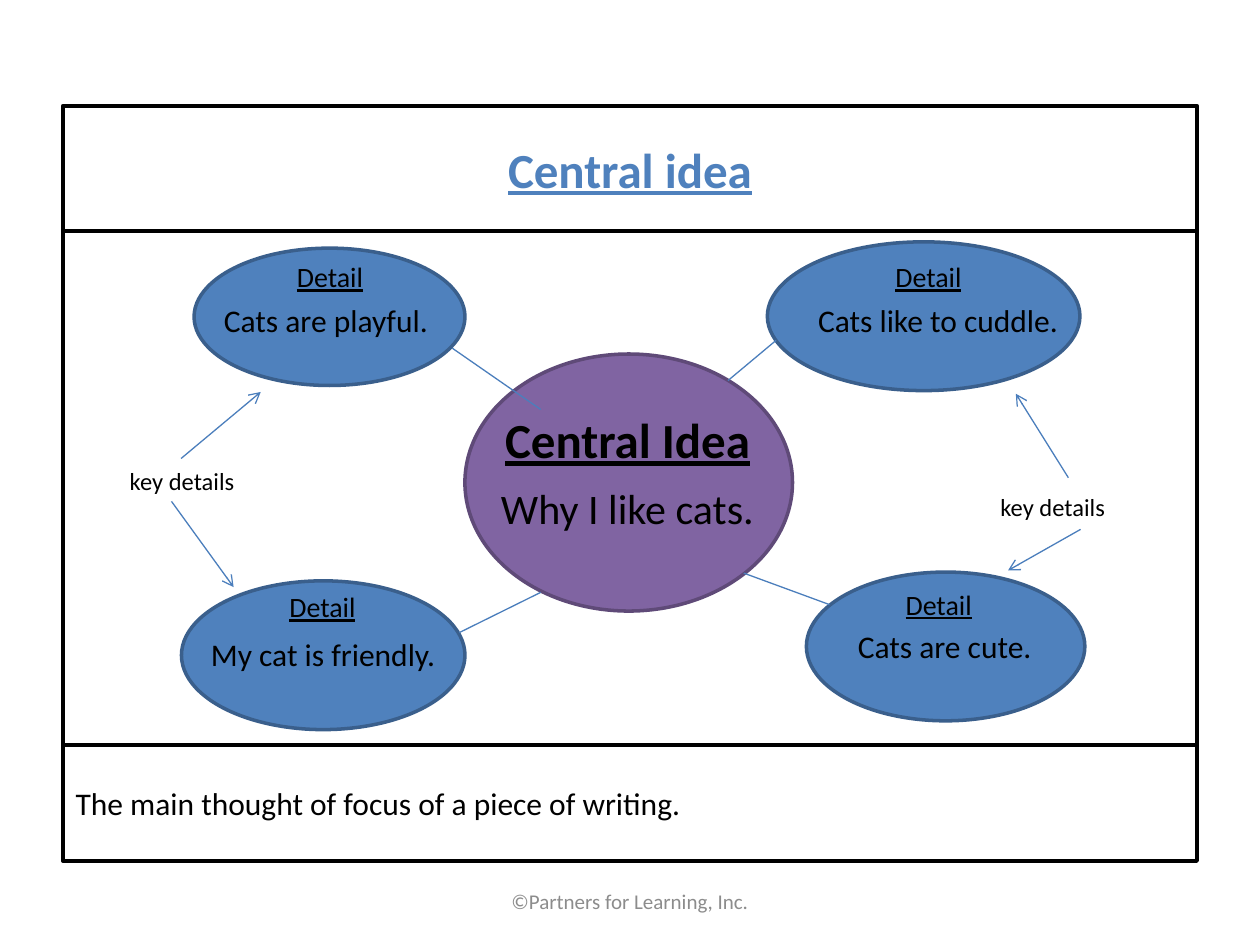
from pptx import Presentation
from pptx.dml.color import RGBColor
from pptx.enum.shapes import MSO_CONNECTOR as Link, MSO_SHAPE as Form
from pptx.enum.text import MSO_ANCHOR as Anchor, PP_ALIGN as Align
from pptx.oxml.ns import qn
from pptx.util import Pt
from lxml.etree import SubElement as Sub


def paint(color, tone):
    color.rgb = RGBColor.from_string(tone)


def write(shape, words, size, tone="000000", align=Align.CENTER,
          anchor=Anchor.TOP, bold=False, under=False):
    frame = shape.text_frame
    frame.text = words
    frame.word_wrap = True
    frame.vertical_anchor = anchor
    para = frame.paragraphs[0]
    para.alignment = align
    font = para.runs[0].font
    font.name, font.size = "Calibri", Pt(size)
    font.bold, font.underline = bold, under
    paint(font.color, tone)


deck = Presentation()
deck.slide_width, deck.slide_height = Pt(720), Pt(540)
slide = deck.slides.add_slide(deck.slide_layouts[1])
shapes = slide.shapes
title, body = slide.placeholders[0], slide.placeholders[1]

# Three stacked frames
left, width = 36, 648
rows = [(60.5, 71.5), (132, 294), (426, 66)]
for top, height in rows:
    frame = shapes.add_shape(Form.RECTANGLE, Pt(left), Pt(top), Pt(width), Pt(height))
    frame.shadow.inherit = False
    frame.fill.background()
    paint(frame.line.color, "000000")
    frame.line.width = Pt(2.25)

# Title and definition, in the first and last frames
for holder, (top, height) in ((title, rows[0]), (body, rows[2])):
    holder.left, holder.top = Pt(left), Pt(top)
    holder.width, holder.height = Pt(width), Pt(height)
write(title, "Central idea", 28, "4F81BD", anchor=Anchor.MIDDLE, bold=True, under=True)
write(body, "The main thought of focus of a piece of writing.", 18,
      align=Align.LEFT, anchor=Anchor.MIDDLE)
props = body.text_frame.paragraphs[0]._p.get_or_add_pPr()
props.set("marL", "0")
props.set("indent", "0")
Sub(props, qn("a:buNone"))

# Ellipses: four details around the central idea
blue, purple = ("4F81BD", "3A5F8C"), ("8064A2", "5F4A78")
ovals = [
    (460.8, 326.9, 159.1, 85, blue),
    (438.5, 138.2, 178.6, 85, blue),
    (103.7, 331.9, 162, 85, blue),
    (110.9, 141.8, 154.8, 78.5, blue),
    (265.7, 202.3, 187.2, 146.9, purple),
]
for x, y, w, h, (fill, edge) in ovals:
    oval = shapes.add_shape(Form.OVAL, Pt(x), Pt(y), Pt(w), Pt(h))
    oval.shadow.inherit = False
    oval.fill.solid()
    paint(oval.fill.fore_color, fill)
    paint(oval.line.color, edge)
    oval.line.width = Pt(2)

# Spokes from the centre, then arrows from the key details labels
lines = [
    (309, 234, 258.5, 199, False),
    (416, 217.5, 443.5, 194.5, False),
    (425, 327.5, 474, 345.5, False),
    (309, 338.5, 262.5, 361.5, False),
    (103.5, 262, 149, 224, True),
    (98, 286.5, 133.5, 335.5, True),
    (610.5, 273, 580.5, 225, True),
    (617.5, 302.5, 576, 326, True),
]
for x1, y1, x2, y2, arrow in lines:
    line = shapes.add_connector(Link.STRAIGHT, Pt(x1), Pt(y1), Pt(x2), Pt(y2))
    paint(line.line.color, "4B7EBC")
    line.line.width = Pt(0.75)
    if arrow:
        Sub(line.line._get_or_add_ln(), qn("a:tailEnd"), type="arrow")
    Sub(line._element.spPr, qn("a:effectLst"))

# Labels
head = dict(size=16, under=True)
fact = dict(size=18)
key = dict(size=14)
labels = [
    ("Central Idea", 272.9, 230.4, 171.4, 41.8, dict(size=28, bold=True, under=True)),
    ("Why I like cats.", 274.3, 272.2, 168.5, 36, dict(size=24)),
    ("Detail", 486.7, 144.7, 87.8, 27.4, head),
    ("Detail", 144.7, 144.7, 87.8, 27.4, head),
    ("Detail", 140.4, 333.4, 87.8, 27.4, head),
    ("Detail", 492.5, 331.9, 87.8, 27.4, head),
    ("Cats like to cuddle.", 453.6, 168.5, 164.9, 29.5, fact),
    ("Cats are playful.", 113.2, 168.5, 146.2, 29.5, fact),
    ("My cat is friendly.", 109.4, 359.3, 150.5, 29.5, fact),
    ("Cats are cute.", 483.1, 355, 113.8, 29, dict(size=18, align=Align.LEFT)),
    ("key details", 42.5, 262.8, 123.1, 24.5, key),
    ("key details", 540, 277.9, 123.1, 24.5, key),
    ("©Partners for Learning, Inc.", 246, 500.5, 228, 28.75,
     dict(size=12, tone="8C8C8C", anchor=Anchor.MIDDLE)),
]
for words, x, y, w, h, style in labels:
    box = shapes.add_textbox(Pt(x), Pt(y), Pt(w), Pt(h))
    write(box, words, **style)

deck.save("out.pptx")
